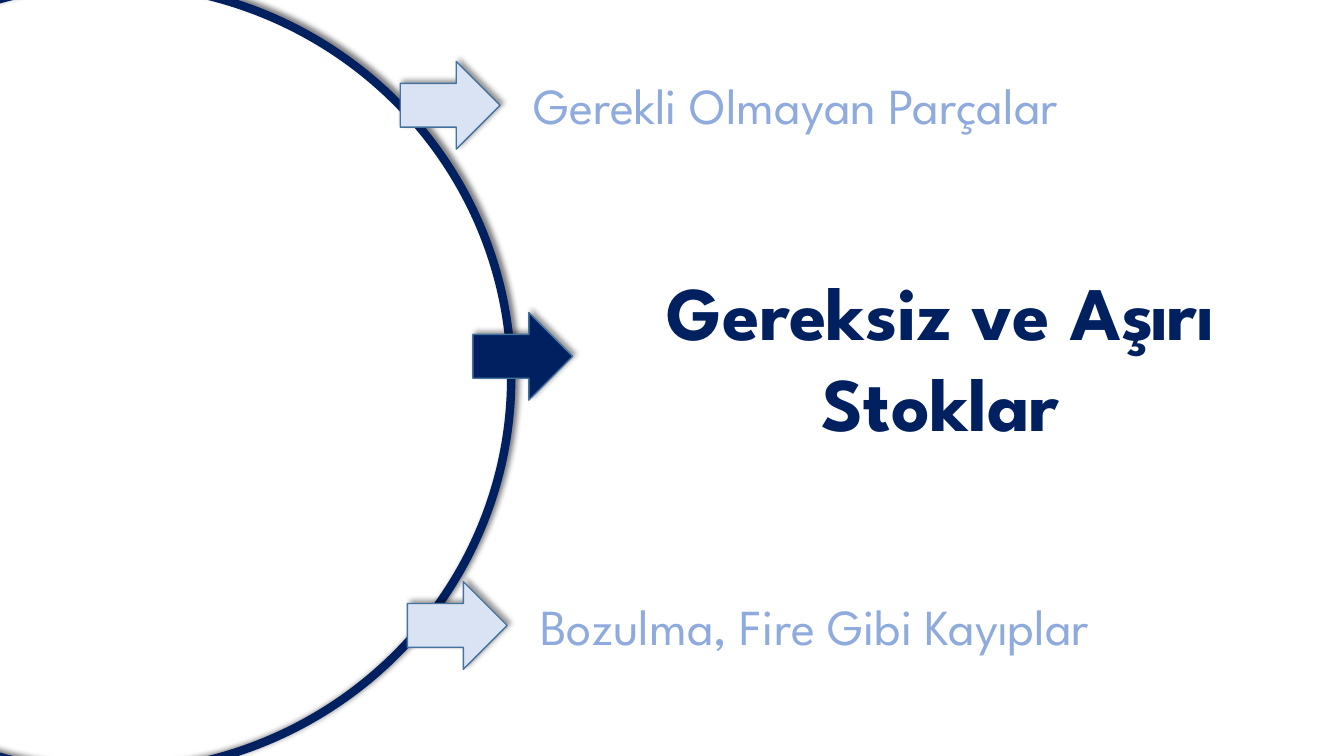
from lxml import etree
from pptx import Presentation
from pptx.dml.color import RGBColor
from pptx.enum.shapes import MSO_SHAPE
from pptx.enum.text import MSO_ANCHOR, MSO_AUTO_SIZE, PP_ALIGN
from pptx.oxml.ns import qn
from pptx.util import Inches, Pt

OVAL, RIGHT_ARROW = MSO_SHAPE.OVAL, MSO_SHAPE.RIGHT_ARROW
TOP = MSO_ANCHOR.TOP
FIT_SHAPE = MSO_AUTO_SIZE.SHAPE_TO_FIT_TEXT
LEFT, CENTER = PP_ALIGN.LEFT, PP_ALIGN.CENTER

FONT = "League Spartan"
NAVY, PALE, SOFT, EDGE = "002060", "DAE3F3", "8FAADC", "43739E"
ARROW_SIZE = (0.99, 0.87)


def color(value):
    return RGBColor.from_string(value)


def add_shadow(sp, opacity):
    sp.shadow.inherit = False
    effects = sp._element.spPr.find(qn("a:effectLst"))
    shadow = etree.SubElement(
        effects, qn("a:outerShdw"), blurRad=str(Pt(4)), dist=str(Pt(3)),
        dir=str(315 * 60000), algn="bl", rotWithShape="0")
    black = etree.SubElement(shadow, qn("a:srgbClr"), val="000000")
    etree.SubElement(black, qn("a:alpha"), val=str(opacity * 1000))


def add_outlined(s, kind, box, line, width, opacity, fill=None):
    sp = s.shapes.add_shape(kind, *map(Inches, box))
    if fill:
        sp.fill.solid()
        sp.fill.fore_color.rgb = color(fill)
    else:
        sp.fill.background()
    sp.line.color.rgb = color(line)
    sp.line.width = Pt(width)
    add_shadow(sp, opacity)


def set_text(sp, box, text, size, text_color, bold=False, align=LEFT):
    sp.left, sp.top, sp.width, sp.height = map(Inches, box)
    tf = sp.text_frame
    tf.text = text
    tf.word_wrap = True
    tf.auto_size = FIT_SHAPE
    tf.vertical_anchor = TOP
    p = tf.paragraphs[0]
    p.alignment = align
    font = p.runs[0].font
    font.name, font.size, font.bold = FONT, Pt(size), bold
    font.color.rgb = color(text_color)


def add_ring(s, box):
    add_outlined(s, OVAL, box, NAVY, 6, 52)


def add_heading(s, box, text):
    left, top, width, height = box
    add_outlined(s, RIGHT_ARROW, (left, top + 0.52, *ARROW_SIZE), EDGE, 1, 40, NAVY)
    set_text(s.shapes.title, (left + 1.16, top, width - 1.16, height),
             text, 54, NAVY, True, CENTER)


def add_item(s, box, text):
    left, top, width, height = box
    add_outlined(s, RIGHT_ARROW, (left, top, *ARROW_SIZE), EDGE, 1, 40, PALE)
    text_box = (left + 1.22, top + 0.08, width - 1.22, height - 0.16)
    sp = s.shapes.add_textbox(*map(Inches, text_box))
    set_text(sp, text_box, text, 36, SOFT)


def main():
    prs = Presentation()
    prs.slide_width, prs.slide_height = Inches(13.33), Inches(7.5)
    s = prs.slides.add_slide(prs.slide_layouts[5])
    add_ring(s, (-2.88, -0.16, 7.95, 7.82))
    add_heading(s, (4.69, 2.58, 8.12, 1.92), "Gereksiz ve Aşırı Stoklar")
    add_item(s, (3.97, 0.61, 8.17, 0.87), "Gerekli Olmayan Parçalar")
    add_item(s, (4.04, 5.77, 7.95, 0.87), "Bozulma, Fire Gibi Kayıplar")
    prs.save("out.pptx")


if __name__ == "__main__":
    main()
